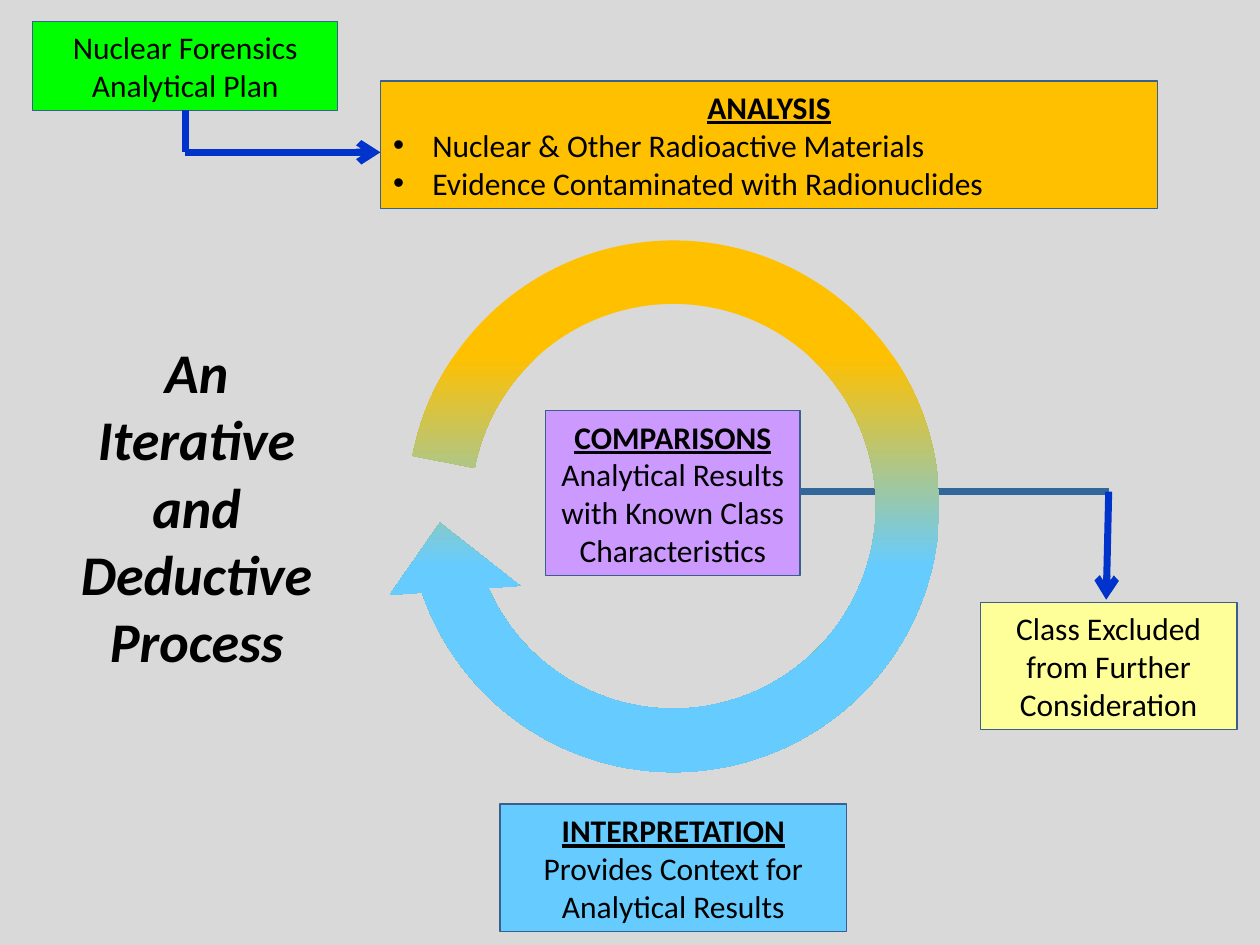
from lxml import etree
from pptx import Presentation
from pptx.dml.color import RGBColor
from pptx.enum.shapes import MSO_CONNECTOR as LINK, MSO_SHAPE as SHAPE
from pptx.enum.text import MSO_ANCHOR as ANCHOR, MSO_AUTO_SIZE as SIZE, PP_ALIGN as ALIGN
from pptx.oxml import parse_xml
from pptx.oxml.ns import nsdecls, qn
from pptx.util import Cm, Pt

HUES = {
    "back": "D9D9D9", "text": "000000", "edge": "3A5F8C",
    "plan": "00FF00", "gold": "FFC000", "sky": "66CCFF",
    "lilac": "CC99FF", "cream": "FFFF99", "steel": "336699", "blue": "0033CC",
}
BODY = {"name": "Calibri", "size": Pt(18), "bold": False}
HEAD = BODY | {"bold": True, "underline": True}
TITLE = BODY | {"size": Pt(32), "bold": True, "italic": True}


def hue(name):
    return RGBColor.from_string(HUES[name])


def place(shape, left, top, width, height):
    shape.left, shape.top = Cm(left), Cm(top)
    shape.width, shape.height = Cm(width), Cm(height)


def write(shape, lines):
    """Fill a shape with (text, format, alignment) paragraphs."""
    frame = shape.text_frame
    frame.word_wrap = True
    frame.auto_size = SIZE.NONE
    frame.vertical_anchor = ANCHOR.MIDDLE
    for i, (text, style, align) in enumerate(lines):
        para = frame.paragraphs[0] if i == 0 else frame.add_paragraph()
        para.alignment = align
        para.space_before = Pt(0)
        run = para.add_run()
        run.text = text
        for key, value in style.items():
            setattr(run.font, key, value)
        run.font.color.rgb = hue("text")


def paint(shape, fill):
    shape.fill.solid()
    shape.fill.fore_color.rgb = hue(fill)
    shape.line.color.rgb = hue("edge")
    shape.line.width = Pt(0.75)


def add_box(slide, spot, fill, text, head=None):
    box = slide.shapes.add_shape(SHAPE.RECTANGLE, *map(Cm, spot))
    box.shadow.inherit = False
    paint(box, fill)
    lines = [(head, HEAD, ALIGN.CENTER)] if head else []
    write(box, lines + [(text, BODY, ALIGN.CENTER)])


def add_list(body, spot, fill, head, items):
    place(body, *spot)
    paint(body, fill)
    write(body, [(head, HEAD, ALIGN.CENTER)] + [(item, BODY, ALIGN.LEFT) for item in items])
    top, *rest = body.text_frame.paragraphs
    for para, dent, mark in [(top, 0, None)] + [(para, Cm(0.79), "•") for para in rest]:
        props = para._p.get_or_add_pPr()
        props.set("marL", str(dent))
        props.set("indent", str(-dent))
        if mark:
            etree.SubElement(props, qn("a:buFont")).set("typeface", "Arial")
            etree.SubElement(props, qn("a:buChar")).set("char", mark)
        else:
            etree.SubElement(props, qn("a:buNone"))


def add_line(slide, start, end, color, arrow=False):
    line = slide.shapes.add_connector(LINK.STRAIGHT, *map(Cm, start + end))
    line.line.color.rgb = hue(color)
    line.line.width = Pt(4)
    if arrow:
        etree.SubElement(line.line._get_or_add_ln(), qn("a:tailEnd")).set("type", "arrow")
    etree.SubElement(line._element.spPr, qn("a:effectLst"))


def add_ring(slide, spot, stops):
    """Add the circular arrow, shaded along (percent, color) stops."""
    ring = slide.shapes.add_shape(SHAPE.CIRCULAR_ARROW, *map(Cm, spot))
    ring.rotation = 180
    for i, value in enumerate((0.106, 10.21, 203.375, 6.554, 0.109)):
        ring.adjustments[i] = value
    ring.shadow.inherit = False
    ring.line.fill.background()
    marks = "".join(
        f'<a:gs pos="{pos * 1000}"><a:srgbClr val="{HUES[color]}"/></a:gs>'
        for pos, color in stops
    )
    grad = parse_xml(
        f'<a:gradFill {nsdecls("a")} rotWithShape="1"><a:gsLst>{marks}</a:gsLst>'
        '<a:lin ang="16200000" scaled="0"/></a:gradFill>'
    )
    ring._element.spPr.find(qn("a:prstGeom")).addnext(grad)


def main():
    deck = Presentation()
    deck.slide_width, deck.slide_height = Cm(25.4), Cm(19.05)
    slide = deck.slides.add_slide(deck.slide_layouts[1])
    back = slide.background.fill
    back.solid()
    back.fore_color.rgb = hue("back")

    title, body = slide.placeholders
    place(title, 1.12, 6.65, 5.69, 7.09)
    write(title, [("An Iterative and Deductive Process", TITLE, ALIGN.CENTER)])
    add_list(body, (7.67, 1.63, 15.67, 2.57), "gold", "ANALYSIS", [
        "Nuclear & Other Radioactive Materials",
        "Evidence Contaminated with Radionuclides",
    ])

    add_box(slide, (0.66, 0.43, 6.15, 1.8), "plan", "Nuclear Forensics Analytical Plan")
    add_box(slide, (10.08, 16.21, 6.99, 2.57), "sky",
            "Provides Context for Analytical Results", "INTERPRETATION")
    add_box(slide, (11, 8.28, 5.13, 3.33), "lilac",
            "Analytical Results with Known Class Characteristics", "COMPARISONS")
    add_box(slide, (19.76, 12.14, 5.18, 2.57), "cream",
            "Class Excluded from Further Consideration")

    bend, turn = (22.35, 9.91), (3.73, 3.07)
    add_line(slide, (16.13, 9.91), bend, "steel")
    add_line(slide, bend, (22.3, 12.09), "blue", arrow=True)
    add_ring(slide, (7.54, 4.17, 12.07, 12.07),
             [(0, "gold"), (25, "gold"), (60, "sky"), (75, "sky"), (100, "sky")])
    add_line(slide, (3.73, 2.21), turn, "blue")
    add_line(slide, turn, (7.67, 3.07), "blue", arrow=True)
    deck.save("out.pptx")


if __name__ == "__main__":
    main()
